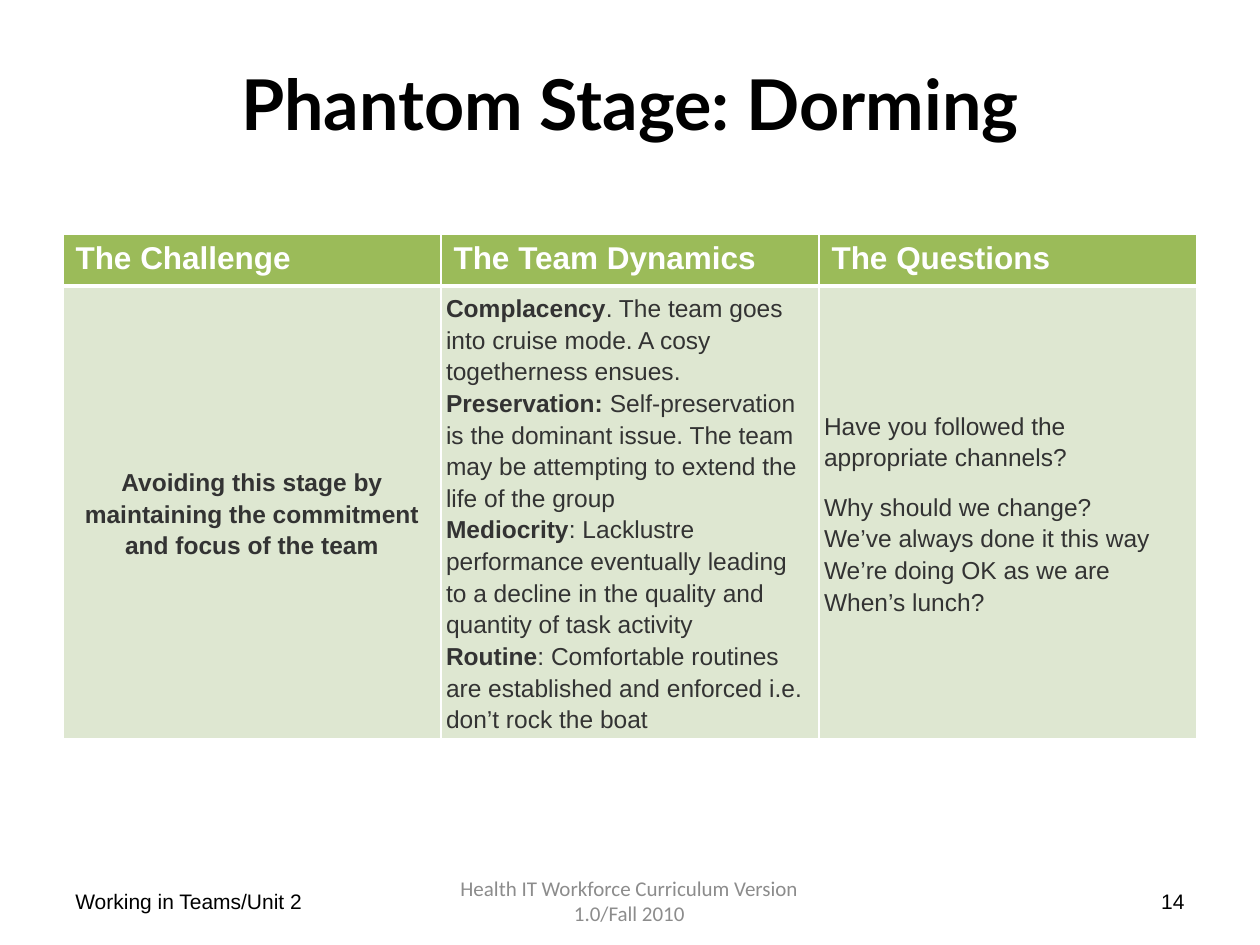
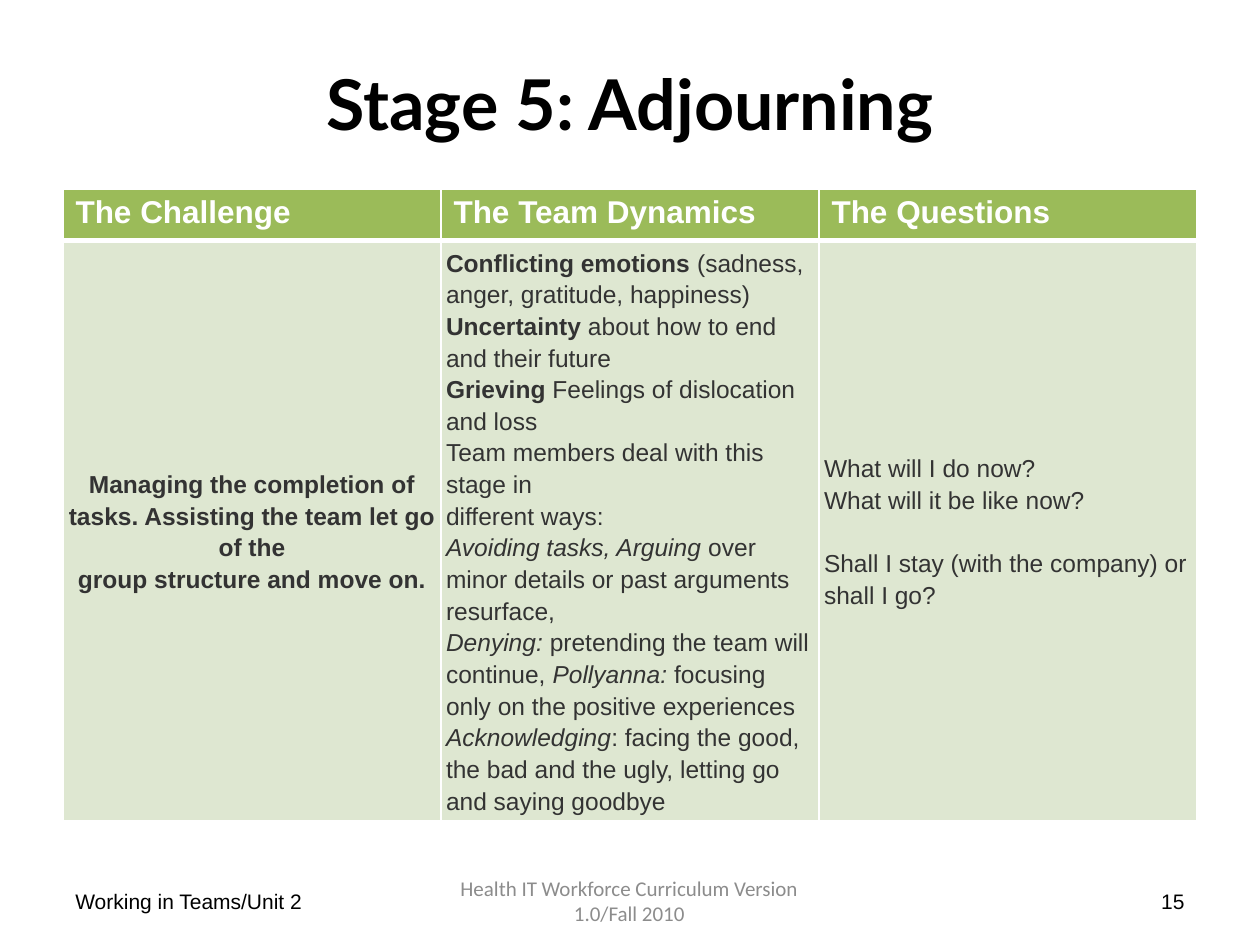
from lxml import etree
from pptx import Presentation
from pptx.dml.color import RGBColor
from pptx.enum.text import MSO_ANCHOR, PP_ALIGN
from pptx.oxml.ns import qn
from pptx.util import Pt

PX = 9144  # 100 px to the inch
LEFT, CENTER, RIGHT = PP_ALIGN.LEFT, PP_ALIGN.CENTER, PP_ALIGN.RIGHT
TOP, MIDDLE = MSO_ANCHOR.TOP, MSO_ANCHOR.MIDDLE
TITLE_ONLY = 5

COLORS = {
    "black": "000000",
    "white": "FFFFFF",
    "head": "9BBB59",
    "cell": "DEE7D1",
    "text": "333333",
    "gray": "8C8C8C",
}
HEADS = ["The Challenge", "The Team Dynamics", "The Questions"]
HEAD_H = 41
UNIT = "Working in Teams/Unit 2"
COURSE = "Health IT Workforce Curriculum Version 1.0/Fall 2010"

# In table text, *stars* mark bold and _underscores_ mark italic.
# "gaps" maps a line of the questions to the space after it, in points.
STAGES = [
    {
        "title": "Phantom Stage: Dorming",
        "page": 14,
        "box": (50, 186, 900, 400),
        "cells": [
            ["*Avoiding this stage by maintaining the commitment and focus of the team*"],
            [
                "*Complacency*. The team goes into cruise mode. A cosy togetherness ensues.",
                "*Preservation:* Self-preservation is the dominant issue. "
                "The team may be attempting to extend the life of the group",
                "*Mediocrity*: Lacklustre performance eventually leading to a decline "
                "in the quality and quantity of task activity",
                "*Routine*: Comfortable routines are established and enforced "
                "i.e. don’t rock the boat",
            ],
            [
                "Have you followed the appropriate channels?",
                "Why should we change?",
                "We’ve always done it this way",
                "We’re doing OK as we are",
                "When’s lunch?",
            ],
        ],
        "gaps": {0: 10},
    },
    {
        "title": "Stage 5: Adjourning",
        "page": 15,
        "box": (50, 150, 900, 500),
        "cells": [
            [
                "*Managing the completion of tasks. Assisting the team let go of the*",
                "*group structure and move on.*",
            ],
            [
                "*Conflicting emotions* (sadness, anger, gratitude, happiness)",
                "*Uncertainty* about how to end and their future",
                "*Grieving* Feelings of dislocation and loss",
                "Team members deal with this stage in",
                "different ways:",
                "_Avoiding tasks, Arguing_ over minor details or past arguments resurface,",
                "_Denying:_ pretending the team will continue, "
                "_Pollyanna:_ focusing only on the positive experiences",
                "_Acknowledging_: facing the good, the bad and the ugly, "
                "letting go and saying goodbye",
            ],
            [
                "What will I do now?",
                "What will it be like now?",
                "Shall I stay (with the company) or shall I go?",
            ],
        ],
        "gaps": {1: 18},
    },
]


def color(name):
    return RGBColor.from_string(COLORS[name])


def style(para, size, ink, font="Arial", align=LEFT, bold=None):
    para.alignment = align
    para.font.name = font
    para.font.size = Pt(size)
    para.font.bold = bold
    para.font.color.rgb = color(ink)


def place(shape, box):
    shape.left, shape.top, shape.width, shape.height = (n * PX for n in box)


def add_title(slide, text, box):
    title = slide.shapes.title
    place(title, box)
    title.text_frame.text = text
    title.text_frame.vertical_anchor = MIDDLE
    style(title.text_frame.paragraphs[0], 40, "black", "Lato", CENTER, True)


def add_note(slide, text, box, **look):
    frame = slide.shapes.add_textbox(*(n * PX for n in box)).text_frame
    frame.word_wrap = True
    frame.vertical_anchor = MIDDLE
    frame.text = text
    style(frame.paragraphs[0], 12, **look)


def add_footer(slide, page, box):
    x, y, w, h = box
    side, mid = 233, 317
    add_note(slide, UNIT, (x, y, side, h), ink="black")
    add_note(slide, str(page), (x + w - side, y, side, h), ink="black", align=RIGHT)
    add_note(slide, COURSE, (x + (w - mid) // 2, y, mid, h),
             ink="gray", font="Calibri", align=CENTER)


def paint(cell, fill, thick):
    """Fill a cell and rule it in white, with one thick edge."""
    props = cell._tc.get_or_add_tcPr()
    for edge in ("lnL", "lnR", "lnT", "lnB"):
        width = Pt(3 if edge == thick else 1)
        line = etree.SubElement(props, qn(f"a:{edge}"), w=str(width))
        solid = etree.SubElement(line, qn("a:solidFill"))
        etree.SubElement(solid, qn("a:srgbClr"), val=COLORS["white"])
    cell.fill.solid()
    cell.fill.fore_color.rgb = color(fill)


def add_runs(para, line):
    for i, part in enumerate(line.split("*")):
        for j, bit in enumerate(part.split("_")):
            if bit:
                run = para.add_run()
                run.text = bit
                run.font.bold = i % 2 == 1
                run.font.italic = j % 2 == 1


def fill_head(cell, text):
    paint(cell, "head", "lnB")
    cell.text = text
    cell.vertical_anchor = TOP
    style(cell.text_frame.paragraphs[0], 18, "white", bold=True)


def fill_body(cell, lines, align, gaps):
    paint(cell, "cell", "lnT")
    cell.vertical_anchor = MIDDLE
    cell.margin_left = cell.margin_right = 4 * PX
    cell.margin_top = cell.margin_bottom = 4 * PX
    frame = cell.text_frame
    for i, line in enumerate(lines):
        para = frame.add_paragraph() if i else frame.paragraphs[0]
        style(para, 14, "text", align=align)
        para.line_spacing = 1.15
        para.space_after = Pt(gaps.get(i, 0))
        add_runs(para, line)


def add_grid(slide, cells, gaps, box):
    x, y, w, h = (n * PX for n in box)
    table = slide.shapes.add_table(2, len(HEADS), x, y, w, h).table
    table.horz_banding = False
    table.rows[0].height = HEAD_H * PX
    table.rows[1].height = h - HEAD_H * PX
    aligns = (CENTER, LEFT, LEFT)
    spaces = ({}, {}, gaps)
    for col, head in enumerate(HEADS):
        fill_head(table.cell(0, col), head)
        fill_body(table.cell(1, col), cells[col], aligns[col], spaces[col])


def add_stage(deck, stage):
    slide = deck.slides.add_slide(deck.slide_layouts[TITLE_ONLY])
    add_title(slide, stage["title"], (50, 30, 900, 103))
    add_grid(slide, stage["cells"], stage["gaps"], stage["box"])
    add_footer(slide, stage["page"], (50, 695, 900, 40))


def main():
    deck = Presentation()
    deck.slide_width, deck.slide_height = 1000 * PX, 750 * PX
    for stage in STAGES:
        add_stage(deck, stage)
    deck.save("out.pptx")


if __name__ == "__main__":
    main()
